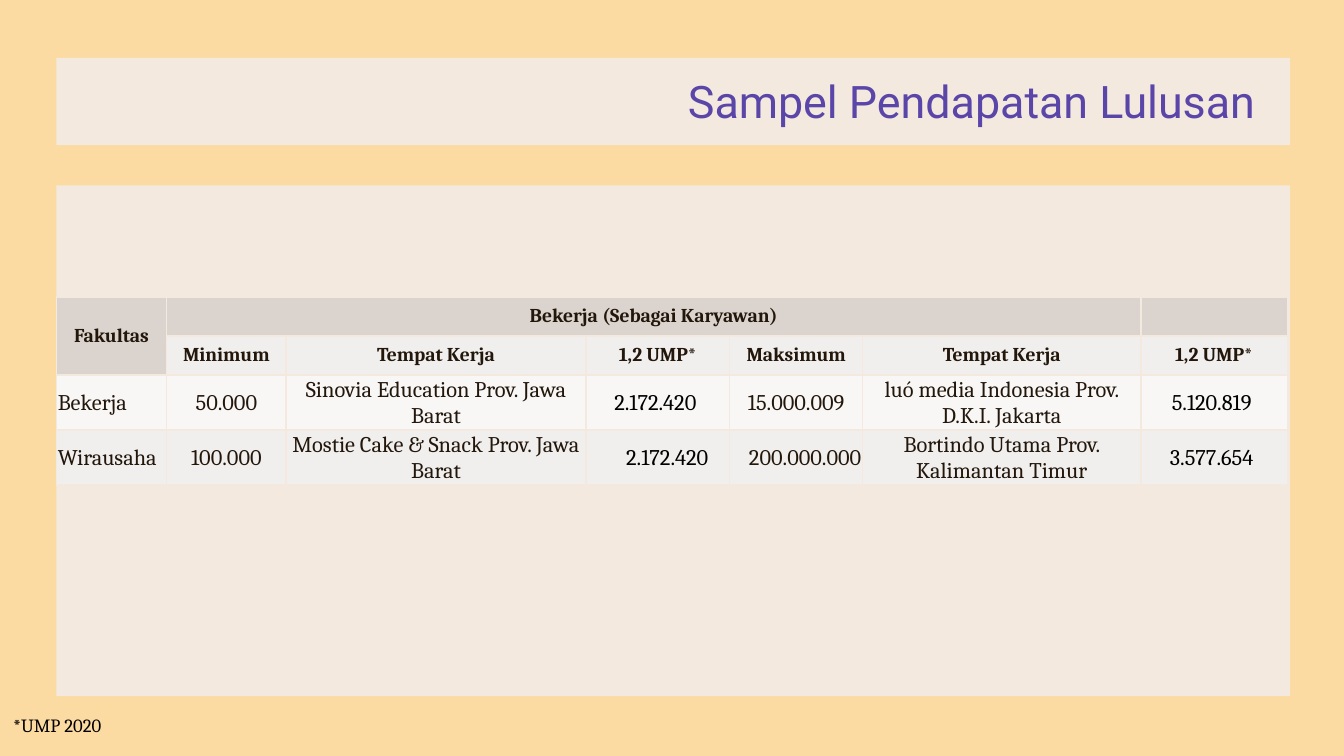
from lxml import etree
from pptx import Presentation, util as u
from pptx.dml.color import RGBColor
from pptx.enum import shapes, text
from pptx.oxml import ns

WIDE = 10
HIGH = WIDE * 9 / 16
EDGE = 0.42
BACK, PANEL = "FCDBA2", "F4E9DF"
INK, BLACK, TITLE = "23170C", "000000", "5A45A8"
HEAD, LIGHT, PALE = "DBD4CE", "F8F7F6", "F1EFED"
LEFT, MID, RIGHT = (text.PP_ALIGN.LEFT, text.PP_ALIGN.CENTER,
                    text.PP_ALIGN.RIGHT)
COLS = [0.82, 0.89, 2.23, 1.07, 0.99, 2.07, 1.09]
ROWS = [0.29, 0.29, 0.41, 0.41]
FILLS = [HEAD, PALE, LIGHT, PALE]
UMP = (3, 6)  # columns in black figures
# Empty strings are blank cells or cells that a merged neighbour covers
DATA = [
    ["Fakultas", "Bekerja (Sebagai Karyawan)", "", "", "", "", ""],
    ["", "Minimum", "Tempat Kerja", "1,2 UMP*", "Maksimum",
     "Tempat Kerja", "1,2 UMP*"],
    ["Bekerja", "50.000", "Sinovia Education Prov. Jawa Barat", "2.172.420 ",
     "15.000.009", "luó media Indonesia Prov. D.K.I. Jakarta", "5.120.819 "],
    ["Wirausaha", "100.000", "Mostie Cake & Snack Prov. Jawa Barat",
     "2.172.420", "200.000.000", "Bortindo Utama Prov. Kalimantan Timur",
     "3.577.654 "],
]
ALIGN = {(2, 0): LEFT, (3, 0): LEFT, (3, 3): LEFT, (3, 4): RIGHT}


def tint(fill, color):
    fill.solid()
    fill.fore_color.rgb = RGBColor.from_string(color)


def box(*sides):
    return [u.Inches(side) for side in sides]


def apply(item, **form):
    for name, value in form.items():
        setattr(item, name, value)


def write(frame, words, color, align=LEFT, **form):
    para = frame.paragraphs[0]
    para.alignment = align
    run = para.add_run()
    run.text = words
    apply(run.font, **form)
    tint(run.font.fill, color)


def panel(slide, top, high):
    shape = slide.shapes.add_shape(
        shapes.MSO_SHAPE.RECTANGLE, *box(EDGE, top, 9.18, high))
    shape.shadow.inherit = False
    tint(shape.fill, PANEL)
    shape.line.fill.background()
    return shape


def title(slide, words):
    shape = slide.shapes.title
    left, top, width, height = box(1.04, 0.42, 8.4, 0.65)
    apply(shape, left=left, top=top, width=width, height=height)
    pad = u.Inches(0.1)
    apply(shape.text_frame, vertical_anchor=text.MSO_ANCHOR.MIDDLE,
          word_wrap=True, margin_left=pad, margin_right=pad,
          margin_top=pad, margin_bottom=pad)
    write(shape.text_frame, words, TITLE, RIGHT, size=u.Pt(24), name="Roboto")


def border(cell, color, width):
    props = cell._tc.get_or_add_tcPr()
    for spot, side in enumerate(("lnL", "lnR", "lnT", "lnB")):
        line = etree.Element(ns.qn("a:" + side), w=str(u.Pt(width)))
        fill = etree.SubElement(line, ns.qn("a:solidFill"))
        etree.SubElement(fill, ns.qn("a:srgbClr"), val=color)
        props.insert(spot, line)


def shrink(cell):
    """Keep a cell without text from stretching its row."""
    para = cell.text_frame.paragraphs[0]._p
    etree.SubElement(para, ns.qn("a:endParaRPr"), sz="1050")


def fill_cell(cell, row, col, words):
    head = row < 2
    side, top, base = (0.1, 0.05, 0.05) if head else (0.01, 0.01, 0)
    start = 0.3 if (row, col) == (3, 3) else side  # indented figure
    apply(cell, vertical_anchor=text.MSO_ANCHOR.MIDDLE,
          margin_left=u.Inches(start), margin_right=u.Inches(side),
          margin_top=u.Inches(top), margin_bottom=u.Inches(base))
    color = BLACK if not head and col in UMP else INK
    write(cell.text_frame, words, color, ALIGN.get((row, col), MID),
          size=u.Pt(10.5 if head else 12), name="Cambria", bold=head)


def table(slide):
    grid = slide.shapes.add_table(
        len(ROWS), len(COLS), *box(EDGE, 2.21, sum(COLS), sum(ROWS))).table
    for col, width in zip(grid.columns, COLS):
        col.width = u.Inches(width)
    for row, height in zip(grid.rows, ROWS):
        row.height = u.Inches(height)
    grid.cell(0, 0).merge(grid.cell(1, 0))
    grid.cell(0, 1).merge(grid.cell(0, 5))
    for row, line in enumerate(DATA):
        for col, words in enumerate(line):
            cell = grid.cell(row, col)
            tint(cell.fill, FILLS[row])
            border(cell, PANEL, 1)
            if words:
                fill_cell(cell, row, col, words)
            else:
                shrink(cell)


def note(slide, words):
    frame = slide.shapes.add_textbox(*box(0, 5.26, 3.32, 0.27)).text_frame
    frame.word_wrap = True
    write(frame, words, BLACK, size=u.Pt(10), name="Cambria")


def main():
    deck = Presentation()
    deck.slide_width, deck.slide_height = box(WIDE, HIGH)
    slide = deck.slides.add_slide(deck.slide_layouts[0])
    tint(slide.background.fill, BACK)
    sub = slide.placeholders[1].element
    sub.getparent().remove(sub)

    # Panels go behind the title
    for top, high in ((0.43, 0.65), (1.38, 3.8)):
        shape = panel(slide, top, high)
        slide.shapes.title.element.addprevious(shape.element)

    # Content
    title(slide, "Sampel Pendapatan Lulusan")
    note(slide, "*UMP 2020")
    table(slide)
    deck.save("out.pptx")


if __name__ == "__main__":
    main()
